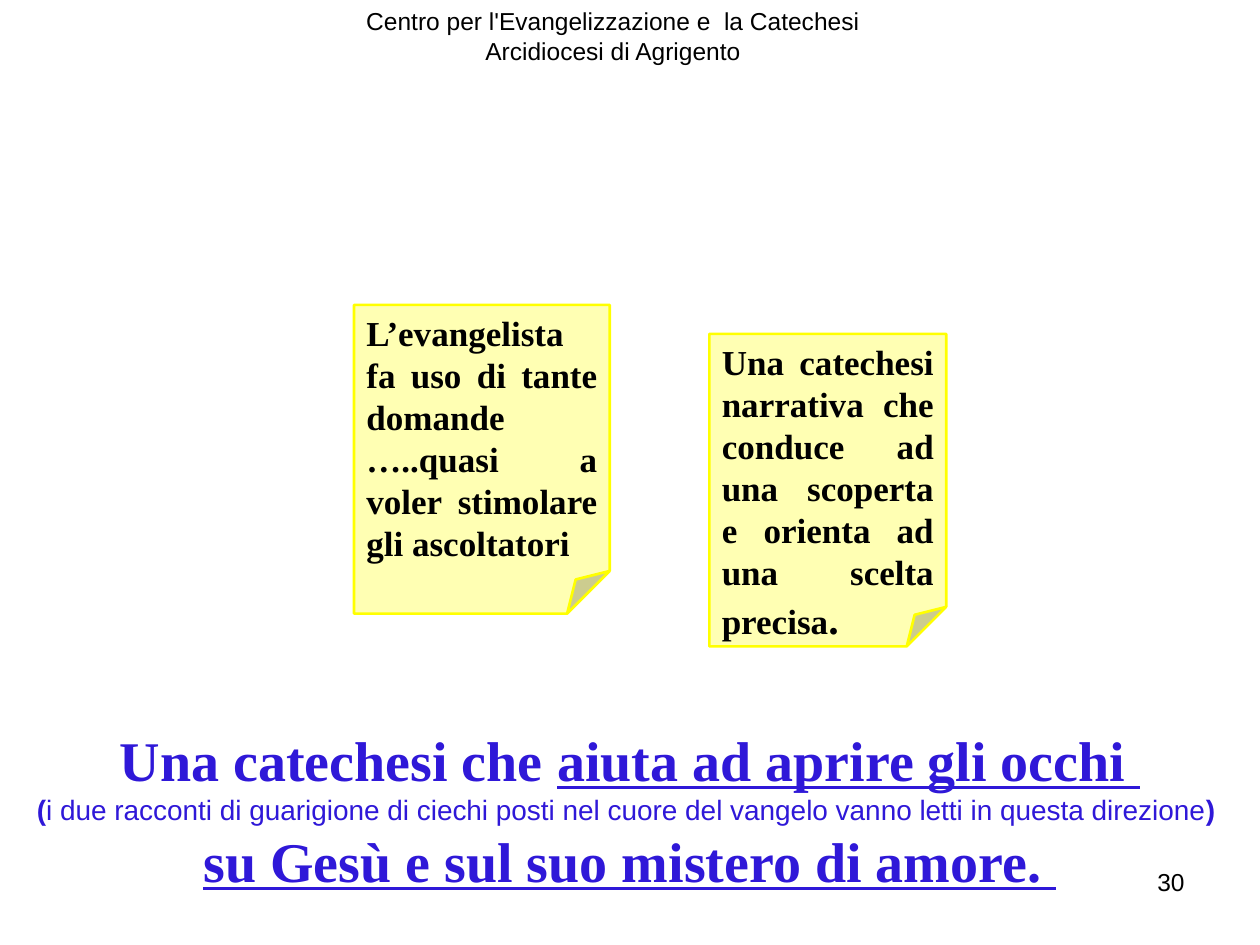
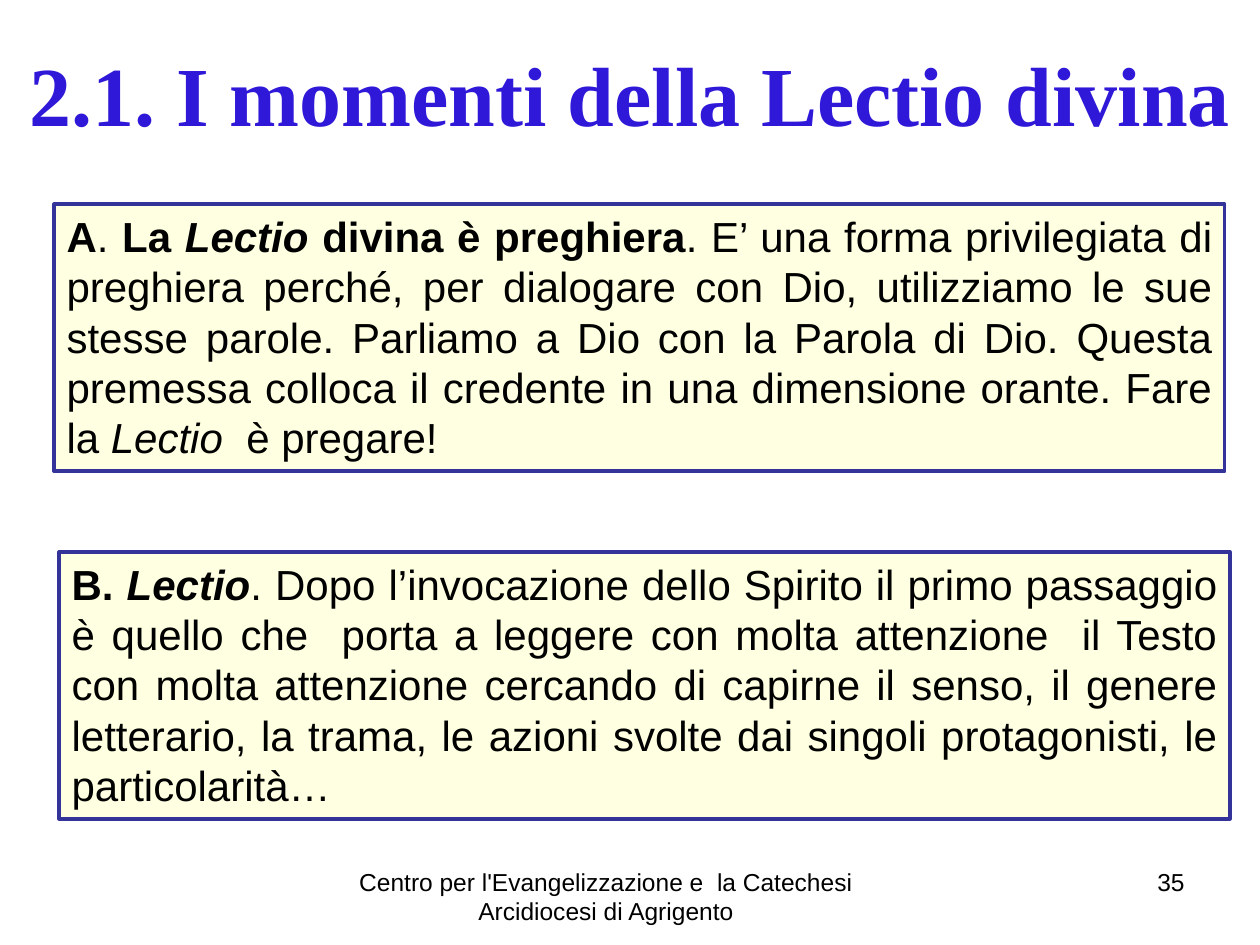
from pptx import Presentation
from pptx.dml.color import RGBColor
from pptx.enum.shapes import MSO_SHAPE
from pptx.enum.text import MSO_ANCHOR, MSO_AUTO_SIZE, PP_ALIGN
from pptx.util import Inches, Pt

CENTER, RIGHT, JUSTIFY = PP_ALIGN.CENTER, PP_ALIGN.RIGHT, PP_ALIGN.JUSTIFY
TOP, MIDDLE = MSO_ANCHOR.TOP, MSO_ANCHOR.MIDDLE
GROW = MSO_AUTO_SIZE.SHAPE_TO_FIT_TEXT
RECTANGLE, FOLDED_CORNER = MSO_SHAPE.RECTANGLE, MSO_SHAPE.FOLDED_CORNER

SANS, SERIF = "Arial", "Times New Roman"
COLORS = {
    "text": "000000",
    "heading": "2F18D8",
    "note_fill": "FFFFB3",
    "note_line": "FFFF00",
    "panel_fill": "FFFFE1",
    "panel_line": "333399",
}
ORGANIZATION = "Centro per l'Evangelizzazione e  la Catechesi Arcidiocesi di Agrigento"


def color(name):
    return RGBColor.from_string(COLORS[name])


def write_paragraph(paragraph, runs, size, font=SANS, align=CENTER, color_name="text"):
    """Runs are (text, style, optional size); style letters are b, i and u."""
    paragraph.alignment = align
    paragraph.font.name = font
    paragraph.font.size = Pt(size)
    paragraph.font.color.rgb = color(color_name)
    for text, style, *own_size in runs:
        run = paragraph.add_run()
        run.text = text
        run.font.bold = "b" in style
        run.font.italic = "i" in style
        run.font.underline = "u" in style
        if own_size:
            run.font.size = Pt(own_size[0])


def add_text_box(slide, box, anchor=TOP):
    frame = slide.shapes.add_textbox(*map(Inches, box)).text_frame
    frame.word_wrap = True
    frame.vertical_anchor = anchor
    return frame


def add_framed_text(slide, kind, box, theme, line_width, runs, size, font):
    shape = slide.shapes.add_shape(kind, *map(Inches, box))
    shape.shadow.inherit = False
    shape.fill.solid()
    shape.fill.fore_color.rgb = color(theme + "_fill")
    shape.line.color.rgb = color(theme + "_line")
    shape.line.width = Pt(line_width)
    frame = shape.text_frame
    frame.word_wrap = True
    frame.auto_size = GROW
    frame.vertical_anchor = TOP
    write_paragraph(frame.paragraphs[0], runs, size, font, JUSTIFY)


def add_note(slide, box, runs):
    add_framed_text(slide, FOLDED_CORNER, box, "note", 1.5, runs, 20, SERIF)


def add_panel(slide, left, top, runs):
    box = (left, top, 9.29, 2.12)
    add_framed_text(slide, RECTANGLE, box, "panel", 2, runs, 24, SANS)


def add_slide(presentation, number, organization_box):
    slide = presentation.slides.add_slide(presentation.slide_layouts[6])
    labels = [
        (organization_box, ORGANIZATION, CENTER),
        ((7.17, 6.83, 2.33, 0.52), str(number), RIGHT),
    ]
    for box, text, align in labels:
        frame = add_text_box(slide, box)
        write_paragraph(frame.paragraphs[0], [(text, "")], 14, align=align)
    return slide


def build_catechesis_slide(presentation):
    slide = add_slide(presentation, 30, (2.64, 0, 4.45, 0.52))
    add_note(slide, (2.81, 2.42, 2.03, 2.45), [
        ("L’evangelista fa uso di tante domande …..quasi a voler stimolare "
         "gli ascoltatori", "b"),
    ])
    add_note(slide, (5.63, 2.65, 1.88, 2.48), [
        ("Una catechesi narrativa che conduce ad una scoperta e orienta ad "
         "una scelta precisa", "b"),
        (".", "b", 24),
    ])
    frame = add_text_box(slide, (0, 5.7, 10, 1.45), MIDDLE)
    conclusion = [
        (32, SERIF, [("Una catechesi che ", "b"), ("aiuta ad aprire gli occhi ", "bu")]),
        (16, SANS, [
            ("(", "b"),
            ("i due racconti di guarigione di ciechi posti nel cuore del vangelo "
             "vanno letti in questa direzione", ""),
            (") ", "b"),
        ]),
        (32, SERIF, [("su Gesù e sul suo mistero di amore. ", "bu")]),
    ]
    for index, (size, font, runs) in enumerate(conclusion):
        paragraph = frame.add_paragraph() if index else frame.paragraphs[0]
        write_paragraph(paragraph, runs, size, font, color_name="heading")


def build_lectio_slide(presentation):
    slide = add_slide(presentation, 35, (2.66, 6.83, 4.3, 0.52))
    title = add_text_box(slide, (0, 0.29, 10, 0.91))
    write_paragraph(title.paragraphs[0], [("2.1. I momenti della Lectio divina", "b")],
                    48, SERIF, color_name="heading")
    add_panel(slide, 0.43, 1.62, [
        ("A", "b"),
        (". ", ""),
        ("La ", "b"),
        ("Lectio", "bi"),
        (" divina è preghiera", "b"),
        (". E’ una forma privilegiata di preghiera perché, per dialogare con Dio, "
         "utilizziamo le sue stesse parole. Parliamo a Dio con la Parola di Dio. "
         "Questa premessa colloca il credente in una dimensione orante. Fare la ", ""),
        ("Lectio", "i"),
        ("  è pregare!", ""),
    ])
    add_panel(slide, 0.47, 4.38, [
        ("B. ", "b"),
        ("Lectio", "bi"),
        (". Dopo l’invocazione dello Spirito il primo passaggio è quello che  porta "
         "a leggere con molta attenzione  il Testo con molta attenzione cercando di "
         "capirne il senso, il genere letterario, la trama, le azioni svolte dai "
         "singoli protagonisti, le particolarità…", ""),
    ])


def main():
    presentation = Presentation()
    presentation.slide_width = Inches(10)
    presentation.slide_height = Inches(7.5)
    build_catechesis_slide(presentation)
    build_lectio_slide(presentation)
    presentation.save("out.pptx")


if __name__ == "__main__":
    main()
